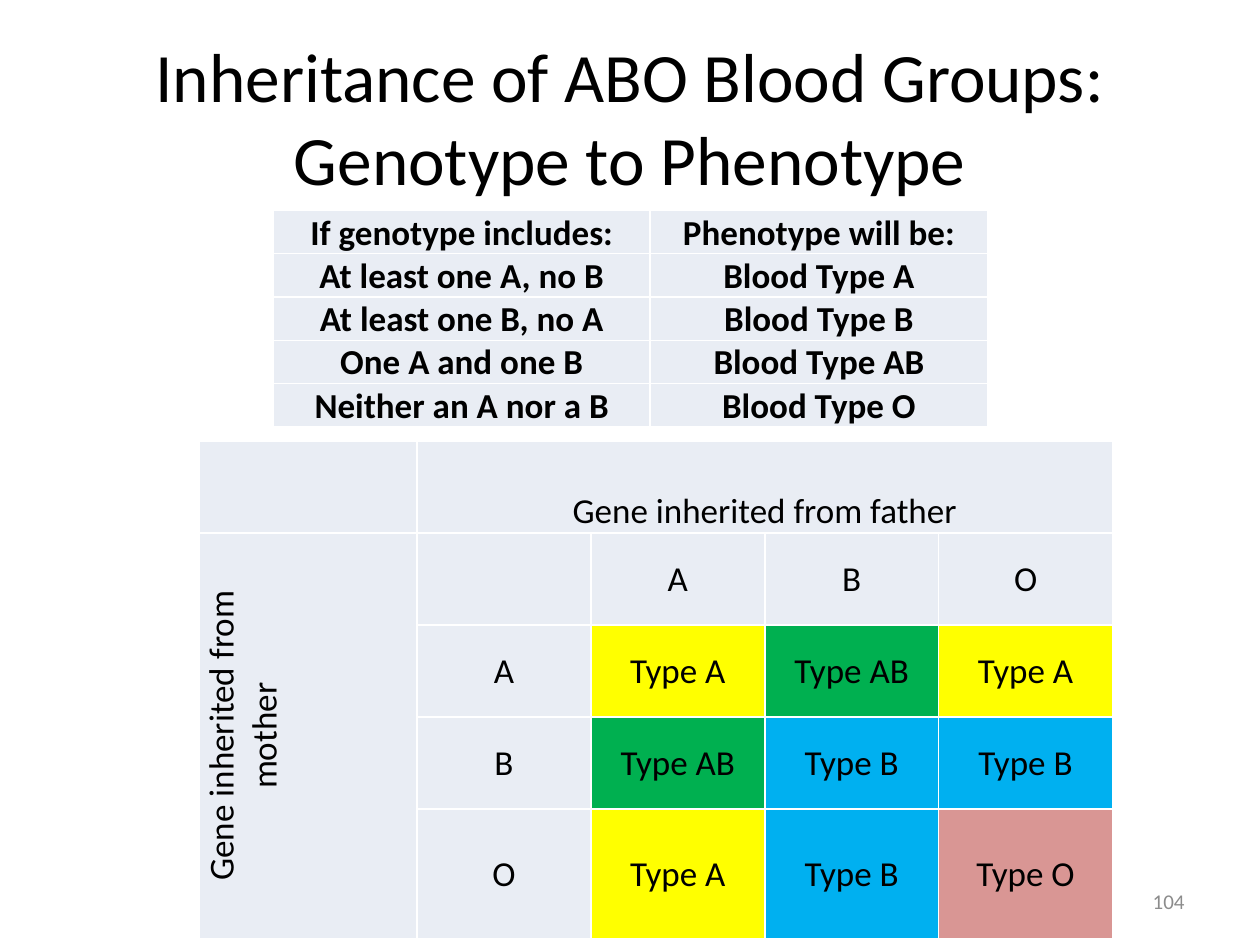
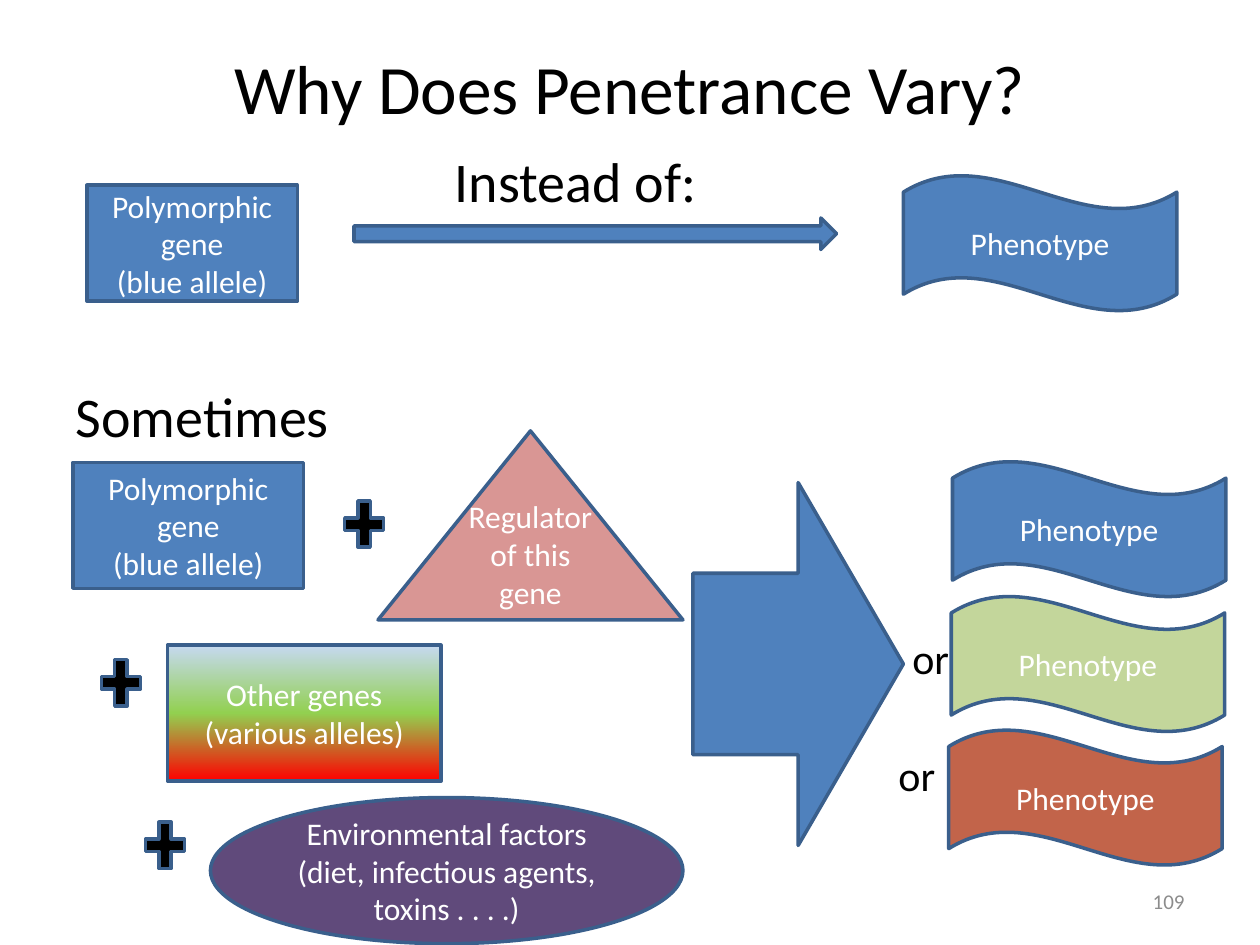
from copy import deepcopy

from lxml.etree import SubElement
from pptx import Presentation
from pptx.dml.color import RGBColor
from pptx.enum.shapes import MSO_SHAPE as Shape
from pptx.enum.text import MSO_ANCHOR as Anchor, MSO_AUTO_SIZE as AutoSize, PP_ALIGN as Align
from pptx.oxml.ns import qn
from pptx.util import Inches, Pt

# Shared look
FONT = "Calibri"
BLACK, WHITE, GREY = "000000", "FFFFFF", "8C8C8C"
BLUE, OUTLINE, PINK, PALE = "4F81BD", "3A5F8C", "D99694", "E9EDF4"
PAGE_NUMBER_BOX = (7.17, 6.95, 2.33, 0.4)

# Slide 1: blood groups
BLOOD_TITLE = "Inheritance of ABO Blood Groups: Genotype to Phenotype"
GENOTYPE_RULES = [
    ("If genotype includes:", "Phenotype will be:"),
    ("At least one A, no B", "Blood Type A"),
    ("At least one B, no A", "Blood Type B"),
    ("One A and one B", "Blood Type AB"),
    ("Neither an A nor a B", "Blood Type O"),
]
ALLELES = "ABO"
TYPE_FILLS = {"A": "FFFF00", "AB": "00B050", "B": "00B0F0", "O": PINK}

# Slide 2: penetrance
PENETRANCE_TITLE = "Why Does Penetrance Vary?"
# text, size, left indent (inches), space before (points)
CAPTIONS = [
    ("Instead of:", 32, 3.01, 0),
    ("Sometimes", 32, 0, 96),
    ("or", 24, 6.64, 105),
    ("or", 24, 6.53, 38),
]
GENE = ["Polymorphic gene", "(blue allele)"]
ENVIRONMENT = ["Environmental factors", "(diet, infectious agents, toxins . . . .)"]
OTHER_GENES_GRADIENT = [(0, "C6D9F1"), (50, "92D050"), (100, "FF0000")]
WAVE_SIZE = (2.17, 1.08)
PLUS_SIZE = (0.42, 0.5)
# preset, left, top, (width, height), fill, paragraphs
DIAGRAM = [
    (Shape.FLOWCHART_PROCESS, 0.69, 1.47, (1.67, 0.92), BLUE, GENE),
    (Shape.RIGHT_ARROW, 2.81, 1.73, (3.83, 0.25), BLUE, []),
    (Shape.WAVE, 7.17, 1.39, WAVE_SIZE, BLUE, ["Phenotype"]),
    (Shape.RECTANGLE, 0.58, 3.67, (1.83, 1), BLUE, GENE),
    (Shape.MATH_PLUS, 2.68, 3.91, PLUS_SIZE, BLACK, []),
    (Shape.ISOSCELES_TRIANGLE, 3, 3.42, (2.42, 1.5), PINK, ["Regulator of this gene"]),
    (Shape.MATH_PLUS, 0.75, 5.17, PLUS_SIZE, BLACK, []),
    (Shape.FLOWCHART_PROCESS, 1.33, 5.12, WAVE_SIZE, OTHER_GENES_GRADIENT,
     ["Other genes (various alleles)"]),
    (Shape.MATH_PLUS, 1.1, 6.46, PLUS_SIZE, BLACK, []),
    (Shape.OVAL, 1.67, 6.33, (3.75, 1.16), "604A7B", ENVIRONMENT),
    (Shape.RIGHT_ARROW, 5.5, 3.83, (1.67, 2.88), BLUE, []),
    (Shape.WAVE, 7.56, 3.66, WAVE_SIZE, BLUE, ["Phenotype"]),
    (Shape.WAVE, 7.55, 4.73, WAVE_SIZE, "C3D69B", ["Phenotype"]),
    (Shape.WAVE, 7.53, 5.79, WAVE_SIZE, "C2644A", ["Phenotype"]),
]


def paint(color_format, color):
    color_format.rgb = RGBColor.from_string(color)


def solid(fill, color):
    fill.solid()
    paint(fill.fore_color, color)


def vertical_gradient(shape, stops):
    shape.fill.gradient()
    shape.fill.gradient_angle = 270
    stop_list = shape.element.spPr.find(".//" + qn("a:gsLst"))
    stop_list.append(deepcopy(stop_list[0]))
    for stop, (position, color) in zip(shape.fill.gradient_stops, stops):
        stop.position = position / 100
        paint(stop.color, color)


def style(paragraph, size, color=BLACK, align=Align.CENTER, bold=False):
    paragraph.alignment = align
    font = paragraph.font
    font.name, font.size, font.bold = FONT, Pt(size), bold
    paint(font.color, color)


def place(shape, left, top, width, height):
    shape.left, shape.top = Inches(left), Inches(top)
    shape.width, shape.height = Inches(width), Inches(height)


def add_slide(presentation, layout, title, title_height, number):
    slide = presentation.slides.add_slide(presentation.slide_layouts[layout])
    heading = slide.shapes.title
    place(heading, 0.5, 0.3, 9, title_height)
    heading.text_frame.text = title
    heading.text_frame.auto_size = AutoSize.NONE
    style(heading.text_frame.paragraphs[0], 39.6)
    box = slide.shapes.add_textbox(*map(Inches, PAGE_NUMBER_BOX))
    box.text_frame.word_wrap = True
    box.text_frame.vertical_anchor = Anchor.MIDDLE
    box.text_frame.text = str(number)
    style(box.text_frame.paragraphs[0], 12, GREY, Align.RIGHT)
    return slide


def add_grid(slide, left, top, widths, row_count, row_height):
    frame = slide.shapes.add_table(
        row_count, len(widths), Inches(left), Inches(top),
        Inches(sum(widths)), Inches(row_count * row_height))
    table = frame.table
    table.first_row = table.horz_banding = False
    for column, width in zip(table.columns, widths):
        column.width = Inches(width)
    for row in table.rows:
        row.height = Inches(row_height)
    for cell in table.iter_cells():
        properties = cell._tc.get_or_add_tcPr()
        for side in ("lnL", "lnR", "lnT", "lnB"):
            line = SubElement(properties, qn("a:" + side), w=str(Pt(1)))
            line_fill = SubElement(line, qn("a:solidFill"))
            SubElement(line_fill, qn("a:srgbClr"), val=WHITE)
        solid(cell.fill, PALE)
    return table


def write_cell(cell, text, anchor=Anchor.MIDDLE, bold=False):
    cell.text = text
    cell.vertical_anchor = anchor
    cell.margin_left = cell.margin_right = cell.margin_top = Inches(0.01)
    cell.margin_bottom = 0
    style(cell.text_frame.paragraphs[0], 20, bold=bold)


def blood_type(mother, father):
    return "".join(sorted({mother, father} - {"O"})) or "O"


def build_blood_groups(presentation):
    slide = add_slide(presentation, 5, BLOOD_TITLE, 1.25, 104)
    rules = add_grid(slide, 2.17, 1.67, [2.99, 2.68], len(GENOTYPE_RULES), 0.33)
    for row, texts in enumerate(GENOTYPE_RULES):
        for column, text in enumerate(texts):
            write_cell(rules.cell(row, column), text, bold=True)

    # Cross of the parents' alleles
    cross = add_grid(slide, 1.58, 3.5, [1.73] + [1.38] * 4, 5, 0.73)
    father, mother = cross.cell(0, 1), cross.cell(1, 0)
    father.merge(cross.cell(0, 4))
    mother.merge(cross.cell(4, 0))
    write_cell(father, "Gene inherited from father", Anchor.BOTTOM)
    write_cell(mother, "Gene inherited from mother", Anchor.BOTTOM)
    mother._tc.get_or_add_tcPr().set("vert", "vert270")
    for row, from_mother in enumerate(ALLELES, 2):
        write_cell(cross.cell(1, row), from_mother)
        write_cell(cross.cell(row, 1), from_mother)
        for column, from_father in enumerate(ALLELES, 2):
            result = blood_type(from_mother, from_father)
            write_cell(cross.cell(row, column), f"Type {result}")
            solid(cross.cell(row, column).fill, TYPE_FILLS[result])


def add_captions(body):
    place(body, 0.5, 1.11, 9, 6.3)
    frame = body.text_frame
    frame.auto_size = AutoSize.NONE
    frame.text = "\n".join(caption[0] for caption in CAPTIONS)
    for paragraph, (_, size, indent, gap) in zip(frame.paragraphs, CAPTIONS):
        style(paragraph, size, align=Align.LEFT)
        paragraph.space_before = Pt(gap)
        properties = paragraph._p.get_or_add_pPr()
        properties.set("marL", str(Inches(indent)))
        properties.set("indent", "0")
        bullet_off = SubElement(properties, qn("a:buNone"))
        properties.find(qn("a:defRPr")).addprevious(bullet_off)


def add_part(slide, preset, left, top, size, fill, lines):
    shape = slide.shapes.add_shape(preset, *map(Inches, (left, top, *size)))
    shape.shadow.inherit = False
    if isinstance(fill, str):
        solid(shape.fill, fill)
    else:
        vertical_gradient(shape, fill)
    paint(shape.line.color, OUTLINE)
    shape.line.width = Pt(2)
    if lines:
        frame = shape.text_frame
        frame.word_wrap = True
        frame.vertical_anchor = Anchor.MIDDLE
        frame.text = "\n".join(lines)
        for paragraph in frame.paragraphs:
            style(paragraph, 18, WHITE)
        if preset == Shape.ISOSCELES_TRIANGLE:
            frame.margin_bottom = Inches(0.35)


def build_penetrance(presentation):
    slide = add_slide(presentation, 1, PENETRANCE_TITLE, 0.78, 109)
    add_captions(slide.placeholders[1])
    for part in DIAGRAM:
        add_part(slide, *part)


def main():
    presentation = Presentation()
    presentation.slide_width, presentation.slide_height = Inches(10), Inches(7.5)
    build_blood_groups(presentation)
    build_penetrance(presentation)
    presentation.save("out.pptx")


if __name__ == "__main__":
    main()
